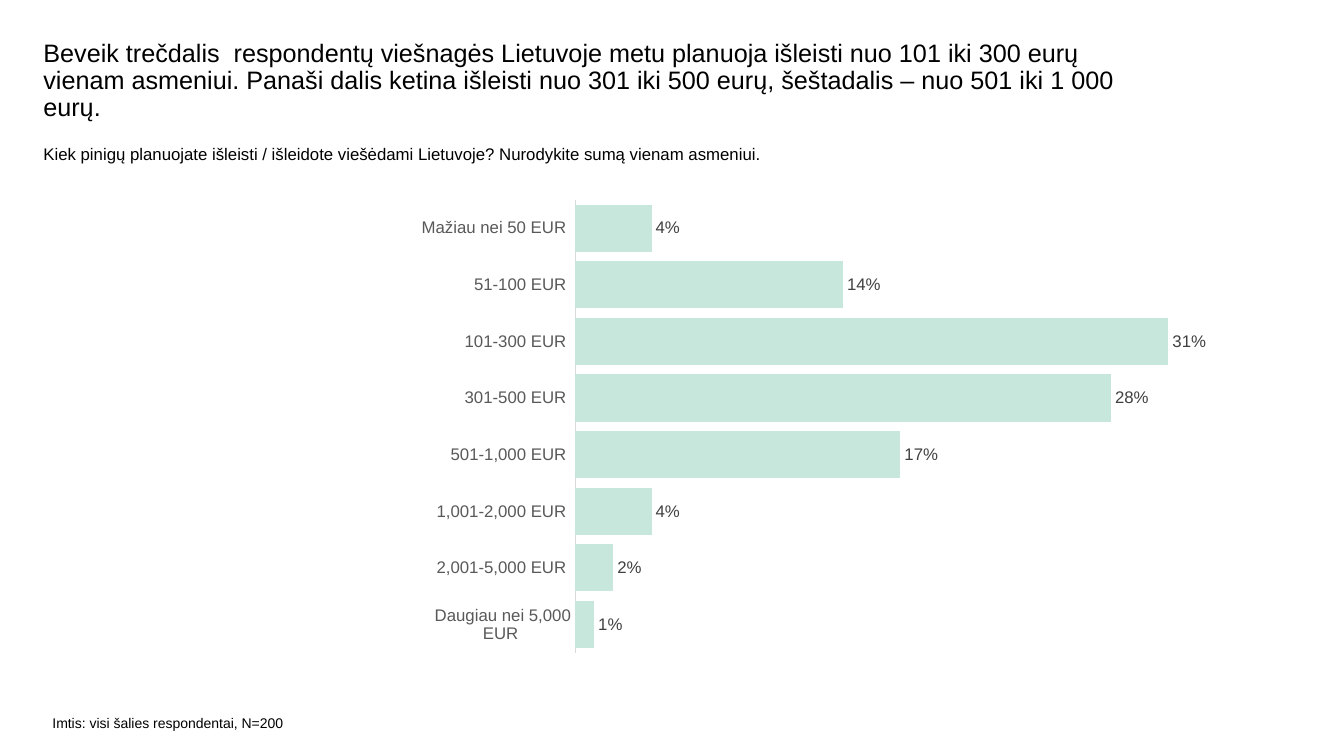
"""Build a slide with a bar chart of planned visitor spending."""
from dataclasses import dataclass

import lxml.etree
import pptx
import pptx.chart.data
import pptx.dml.color
import pptx.enum.chart
import pptx.enum.text
import pptx.oxml.ns
import pptx.util

Inches = pptx.util.Inches


@dataclass(frozen=True)
class Theme:
    font: str = "Arial"
    text: str = "000000"
    category: str = "595959"
    value: str = "404040"
    axis: str = "D9D9D9"
    bar: str = "C7E6DC"
    title_size: int = 18
    body_size: int = 12
    note_size: int = 10


class SpendingSlide:
    def __init__(self, presentation, theme):
        self.theme = theme
        self.slide = presentation.slides.add_slide(presentation.slide_layouts[5])

    def style_font(self, font, size, color):
        font.name = self.theme.font
        font.size = pptx.util.Pt(size)
        font.color.rgb = pptx.dml.color.RGBColor.from_string(color)

    def fill_text(self, shape, text, size):
        frame = shape.text_frame
        frame.word_wrap = True
        frame.auto_size = pptx.enum.text.MSO_AUTO_SIZE.NONE
        frame.vertical_anchor = pptx.enum.text.MSO_ANCHOR.TOP
        frame.margin_left = frame.margin_right = 0
        frame.margin_top = frame.margin_bottom = 0
        paragraph = frame.paragraphs[0]
        paragraph.alignment = pptx.enum.text.PP_ALIGN.LEFT
        run = paragraph.add_run()
        run.text = text
        self.style_font(run.font, size, self.theme.text)
        return paragraph

    def add_title(self, text, left, top, width, height):
        title = self.slide.shapes.title
        title.left, title.top = Inches(left), Inches(top)
        title.width, title.height = Inches(width), Inches(height)
        paragraph = self.fill_text(title, text, self.theme.title_size)
        paragraph.line_spacing = 0.9

    def add_text(self, text, size, left, top, width, height):
        box = self.slide.shapes.add_textbox(
            Inches(left), Inches(top), Inches(width), Inches(height))
        self.fill_text(box, text, size)

    def add_bar_chart(self, shares, left, top, width, height):
        theme = self.theme
        data = pptx.chart.data.CategoryChartData(number_format="0%")
        data.categories = shares.keys()
        data.add_series("Series 1", shares.values())
        chart = self.slide.shapes.add_chart(
            pptx.enum.chart.XL_CHART_TYPE.BAR_CLUSTERED,
            Inches(left), Inches(top), Inches(width), Inches(height), data).chart
        chart.has_legend = False
        chart.has_title = False
        self.style_font(chart.font, theme.note_size, theme.text)

        categories = chart.category_axis
        categories.reverse_order = True
        categories.major_tick_mark = pptx.enum.chart.XL_TICK_MARK.NONE
        categories.format.line.width = pptx.util.Pt(0.75)
        categories.format.line.color.rgb = pptx.dml.color.RGBColor.from_string(theme.axis)
        self.style_font(categories.tick_labels.font, theme.body_size, theme.category)

        values = chart.value_axis
        values.minimum_scale, values.maximum_scale = 0, 0.35
        values.has_major_gridlines = False
        values.visible = False

        plot = chart.plots[0]
        plot.gap_width = 20
        plot.vary_by_categories = False
        fill = plot.series[0].format.fill
        fill.solid()
        fill.fore_color.rgb = pptx.dml.color.RGBColor.from_string(theme.bar)

        plot.has_data_labels = True
        labels = plot.data_labels
        labels.show_value = True
        labels.number_format = "0%"
        labels.number_format_is_linked = False
        labels.position = pptx.enum.chart.XL_LABEL_POSITION.OUTSIDE_END
        self.style_font(labels.font, theme.body_size, theme.value)
        self.place_plot(chart, x=0.2, y=0.02, w=0.78, h=0.96)

    def place_plot(self, chart, **fractions):
        qualify = pptx.oxml.ns.qn
        area = chart.plots[0]._element.getparent()
        for existing in area.findall(qualify("c:layout")):
            area.remove(existing)
        layout = lxml.etree.Element(qualify("c:layout"))
        area.insert(0, layout)
        manual = lxml.etree.SubElement(layout, qualify("c:manualLayout"))
        settings = {"layoutTarget": "inner", "xMode": "edge", "yMode": "edge", **fractions}
        for name, value in settings.items():
            lxml.etree.SubElement(manual, qualify(f"c:{name}")).set("val", str(value))


def main():
    presentation = pptx.Presentation()
    presentation.slide_width = Inches(13.33)
    presentation.slide_height = Inches(7.5)
    theme = Theme()
    slide = SpendingSlide(presentation, theme)
    slide.add_title(
        "Beveik trečdalis  respondentų viešnagės Lietuvoje metu planuoja išleisti "
        "nuo 101 iki 300 eurų vienam asmeniui. Panaši dalis ketina išleisti "
        "nuo 301 iki 500 eurų, šeštadalis – nuo 501 iki 1 000 eurų.",
        0.43, 0.4, 11.06, 0.6)
    slide.add_text(
        "Kiek pinigų planuojate išleisti / išleidote viešėdami Lietuvoje? "
        "Nurodykite sumą vienam asmeniui.",
        theme.body_size, 0.43, 1.43, 11.89, 0.61)
    slide.add_text("Imtis: visi šalies respondentai, N=200",
                   theme.note_size, 0.52, 7.09, 2.53, 0.24)
    slide.add_bar_chart({
        "Mažiau nei 50 EUR ": 0.04,
        "51-100 EUR ": 0.14,
        "101-300 EUR ": 0.31,
        "301-500 EUR ": 0.28,
        "501-1,000 EUR ": 0.17,
        "1,001-2,000 EUR ": 0.04,
        "2,001-5,000 EUR ": 0.02,
        "Daugiau nei 5,000 EUR ": 0.01,
    }, 4, 1.89, 8.52, 4.68)
    presentation.save("out.pptx")


if __name__ == "__main__":
    main()
